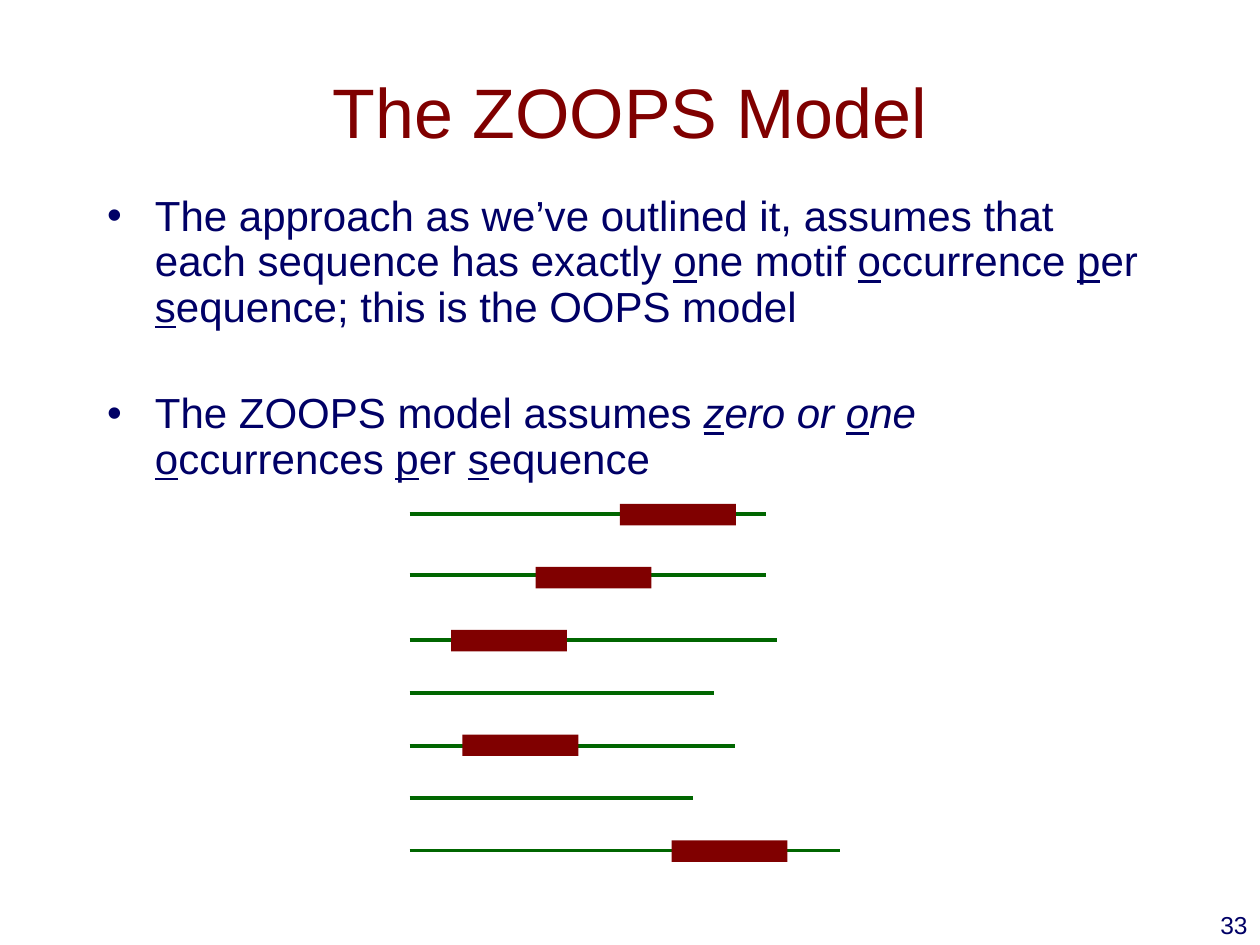
from lxml import etree
from pptx import Presentation
from pptx.dml.color import RGBColor
from pptx.enum.shapes import MSO_CONNECTOR, MSO_SHAPE
from pptx.enum.text import MSO_ANCHOR, MSO_AUTO_SIZE, PP_ALIGN
from pptx.oxml.ns import qn
from pptx.util import Inches, Pt

MAROON, NAVY, GREEN = "800000", "000066", "006600"


def color(hex_string):
    return RGBColor.from_string(hex_string)


def add_run(paragraph, text, size, hex_string, **formats):
    run = paragraph.add_run()
    run.text = text
    values = {"name": "Arial", "size": Pt(size), **formats}
    for name, value in values.items():
        setattr(run.font, name, value)
    run.font.color.rgb = color(hex_string)


presentation = Presentation()
presentation.slide_width, presentation.slide_height = Inches(10), Inches(7.5)
slide = presentation.slides.add_slide(presentation.slide_layouts[1])
title, body = slide.placeholders
number_box = slide.shapes.add_textbox(0, 0, 0, 0)

# Text frames: left, top, width, height, anchor
frames = [
    (title, 0.75, 0.25, 8.5, 1.25, MSO_ANCHOR.MIDDLE),
    (body, 0.75, 1.5, 8.5, 1.42, MSO_ANCHOR.TOP),
    (number_box, 7.92, 7.17, 2.08, 0.5, MSO_ANCHOR.TOP),
]
for shape, left, top, width, height, anchor in frames:
    shape.left, shape.top = Inches(left), Inches(top)
    shape.width, shape.height = Inches(width), Inches(height)
    settings = {"word_wrap": True, "auto_size": MSO_AUTO_SIZE.NONE, "vertical_anchor": anchor}
    for name, value in settings.items():
        setattr(shape.text_frame, name, value)

title_paragraph = title.text_frame.paragraphs[0]
title_paragraph.alignment = PP_ALIGN.CENTER
add_run(title_paragraph, "The ZOOPS Model", 40, MAROON)

number_paragraph = number_box.text_frame.paragraphs[0]
number_paragraph.alignment = PP_ALIGN.RIGHT
add_run(number_paragraph, "33", 14, NAVY)

# Bullets: space before, then (text, italic); underscores enclose underlined letters
bullets = [
    (5, [("The approach as we’ve outlined it, assumes that each sequence has exactly "
          "_o_ne motif _o_ccurrence _p_er _s_equence; this is the OOPS model", False)]),
    (35, [("The ZOOPS model assumes ", False),
          ("_z_ero or _o_ne ", True),
          ("_o_ccurrences _p_er _s_equence", False)]),
]
for index, (space_before, parts) in enumerate(bullets):
    paragraph = body.text_frame.paragraphs[0] if index == 0 else body.text_frame.add_paragraph()
    paragraph.line_spacing = 0.9
    paragraph.space_before = Pt(space_before)
    properties = paragraph._p.get_or_add_pPr()
    properties.set("marL", str(Inches(0.38)))
    properties.set("indent", str(Inches(-0.38)))
    etree.SubElement(properties, qn("a:buChar")).set("char", "•")
    for text, italic in parts:
        for position, piece in enumerate(text.split("_")):
            if piece:
                add_run(paragraph, piece, 24, NAVY, italic=italic, underline=position % 2 == 1)

# Sequences: line height, line end, motif left and top (None without a motif)
sequence_left, motif_width, motif_height = 3.25, 0.92, 0.17
sequences = [
    (4.08, 6.08, (4.92, 4)),
    (4.56, 6.08, (4.25, 4.5)),
    (5.08, 6.17, (3.58, 5)),
    (5.5, 5.67, None),
    (5.92, 5.83, (3.67, 5.83)),
    (6.33, 5.5, None),
    (6.75, 6.67, (5.33, 6.67)),
]
for y, sequence_right, motif_corner in sequences:
    shapes = slide.shapes.add_group_shape().shapes if motif_corner else slide.shapes
    sequence = shapes.add_connector(
        MSO_CONNECTOR.STRAIGHT, Inches(sequence_left), Inches(y), Inches(sequence_right), Inches(y))
    sequence.line.color.rgb = color(GREEN)
    sequence.line.width = Pt(2.25)
    etree.SubElement(sequence._element.spPr, qn("a:effectLst"))
    if motif_corner:
        left, top = motif_corner
        motif = shapes.add_shape(
            MSO_SHAPE.RECTANGLE, Inches(left), Inches(top), Inches(motif_width), Inches(motif_height))
        motif.shadow.inherit = False
        motif.fill.solid()
        motif.fill.fore_color.rgb = color(MAROON)
        motif.line.fill.background()

presentation.save("out.pptx")
